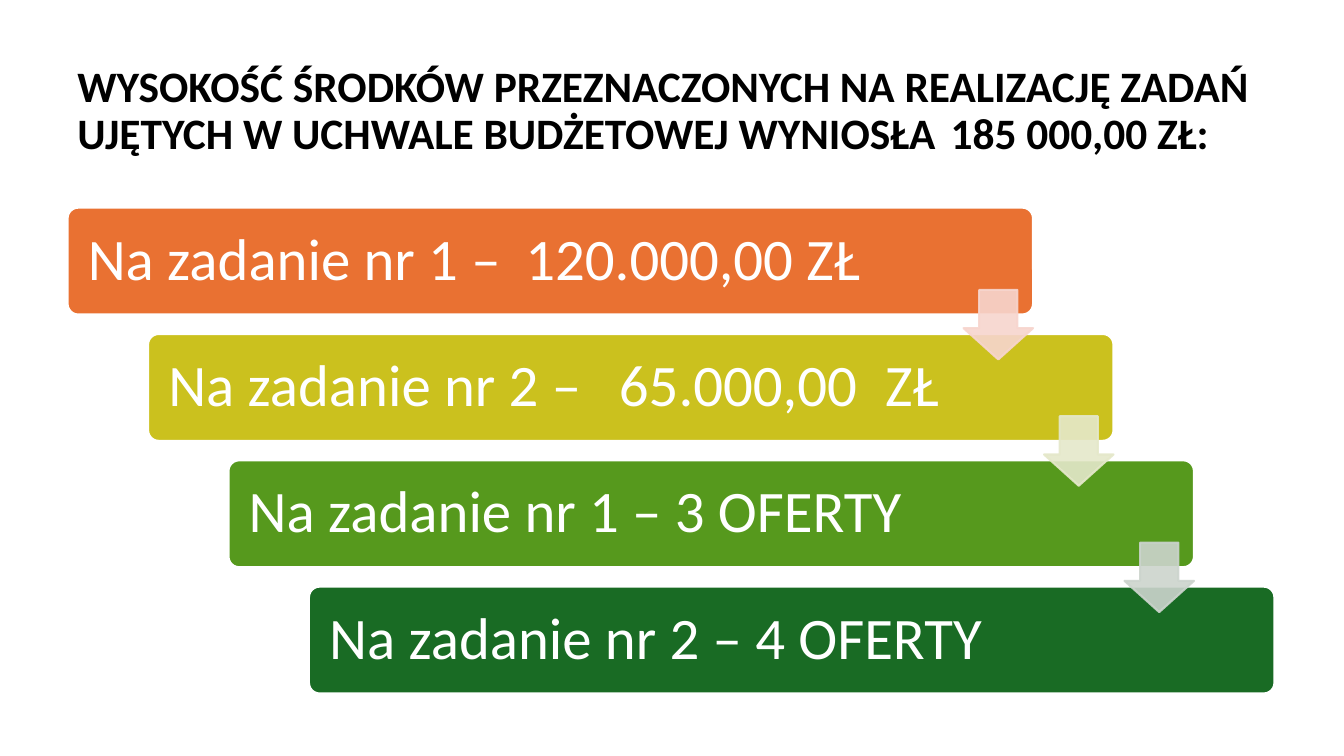
from dataclasses import dataclass

from lxml.etree import SubElement
from pptx import Presentation
from pptx.dml.color import RGBColor
from pptx.enum.shapes import MSO_SHAPE as Preset
from pptx.enum.text import MSO_ANCHOR as Anchor, PP_ALIGN as Align
from pptx.oxml.ns import qn
from pptx.util import Inches, Pt

SLIDE_WIDTH, SLIDE_HEIGHT = 13.33, 7.5

# The staircase of bars, in inches, and the shares each bar takes of it
LEFT, TOP, WIDTH, HEIGHT = 0.67, 2.06, 11.97, 4.82
BAR_WIDTH, BAR_HEIGHT = 0.8 * WIDTH, 0.22 * HEIGHT
ARROW_SIZE = 0.65 * BAR_HEIGHT
ARROW_DROP = 0.77 * BAR_HEIGHT

TITLE = ("WYSOKOŚĆ ŚRODKÓW PRZEZNACZONYCH NA REALIZACJĘ ZADAŃ "
         "UJĘTYCH W UCHWALE BUDŻETOWEJ WYNIOSŁA\t185 000,00 ZŁ:")


@dataclass
class Step:
    text: str
    color: str
    arrow_color: str = ""
    tabs: tuple[float, ...] = ()


STEPS = [
    Step("Na zadanie nr 1 –\t120.000,00 ZŁ", "E97132", "F7D5CE", (4.34,)),
    Step("Na zadanie nr 2 –\t65.000,00\tZŁ", "CBC11E", "E5E8CA", (4.47, 7.11)),
    Step("Na zadanie nr 1 – 3 OFERTY", "56991D", "CCD4CD"),
    Step("Na zadanie nr 2 – 4 OFERTY", "196B24"),
]


def rgb(color: str) -> RGBColor:
    return RGBColor.from_string(color)


def apply(target, values: dict) -> None:
    for name, value in values.items():
        setattr(target, name, value)


def write_text(frame, text: str, size: float, color: str, bold: bool,
               tabs: tuple[float, ...], anchor, margins: dict) -> None:
    apply(frame, {"word_wrap": True, "vertical_anchor": anchor, **margins})
    paragraph = frame.paragraphs[0]
    apply(paragraph, {"alignment": Align.LEFT, "line_spacing": 0.9})
    if tabs:
        tab_list = SubElement(paragraph._p.get_or_add_pPr(), qn("a:tabLst"))
        for position in tabs:
            SubElement(tab_list, qn("a:tab"), pos=str(Inches(position)), algn="l")
    run = paragraph.add_run()
    run.text = text
    apply(run.font, {"name": "Calibri", "size": Pt(size), "bold": bold})
    run.font.color.rgb = rgb(color)


def add_preset(slide, preset, left: float, top: float, width: float, height: float,
               adjustments: tuple[float, ...], fill: str, line: str):
    shape = slide.shapes.add_shape(
        preset, Inches(left), Inches(top), Inches(width), Inches(height))
    shape.shadow.inherit = False
    for index, value in enumerate(adjustments):
        shape.adjustments[index] = value
    shape.fill.solid()
    shape.fill.fore_color.rgb = rgb(fill)
    shape.line.color.rgb = rgb(line)
    shape.line.width = Pt(1.5)
    return shape


def step_origin(index: int) -> tuple[float, float]:
    last = len(STEPS) - 1
    return (LEFT + index * (WIDTH - BAR_WIDTH) / last,
            TOP + index * (HEIGHT - BAR_HEIGHT) / last)


def add_bar(slide, index: int, step: Step) -> None:
    left, top = step_origin(index)
    bar = add_preset(slide, Preset.ROUNDED_RECTANGLE, left, top,
                     BAR_WIDTH, BAR_HEIGHT, (0.1,), step.color, "FFFFFF")
    margins = {f"margin_{side}": Inches(0.17)
               for side in ("left", "top", "right", "bottom")}
    write_text(bar.text_frame, step.text, 42, "FFFFFF", False, step.tabs,
               Anchor.MIDDLE, margins)


def add_arrow(slide, index: int, color: str) -> None:
    left, top = step_origin(index)
    arrow = add_preset(slide, Preset.DOWN_ARROW, left + BAR_WIDTH - ARROW_SIZE,
                       top + ARROW_DROP, ARROW_SIZE, ARROW_SIZE,
                       (0.55, 0.45), color, color)
    # Let the bars show slightly through both fill and outline
    for color_element in arrow._element.spPr.iter(qn("a:srgbClr")):
        SubElement(color_element, qn("a:alpha"), val="90000")


def main() -> None:
    presentation = Presentation()
    apply(presentation, {"slide_width": Inches(SLIDE_WIDTH),
                         "slide_height": Inches(SLIDE_HEIGHT)})
    slide = presentation.slides.add_slide(presentation.slide_layouts[6])

    # Title
    title = slide.shapes.add_textbox(
        Inches(LEFT), Inches(0.08 * SLIDE_HEIGHT), Inches(WIDTH), Inches(1.24))
    write_text(title.text_frame, TITLE, 31, "000000", True, (8.66,), Anchor.TOP, {})

    # Bars first, so that the arrows lie over them
    for index, step in enumerate(STEPS):
        add_bar(slide, index, step)
    for index, step in enumerate(STEPS):
        if step.arrow_color:
            add_arrow(slide, index, step.arrow_color)

    presentation.save("out.pptx")


if __name__ == "__main__":
    main()
